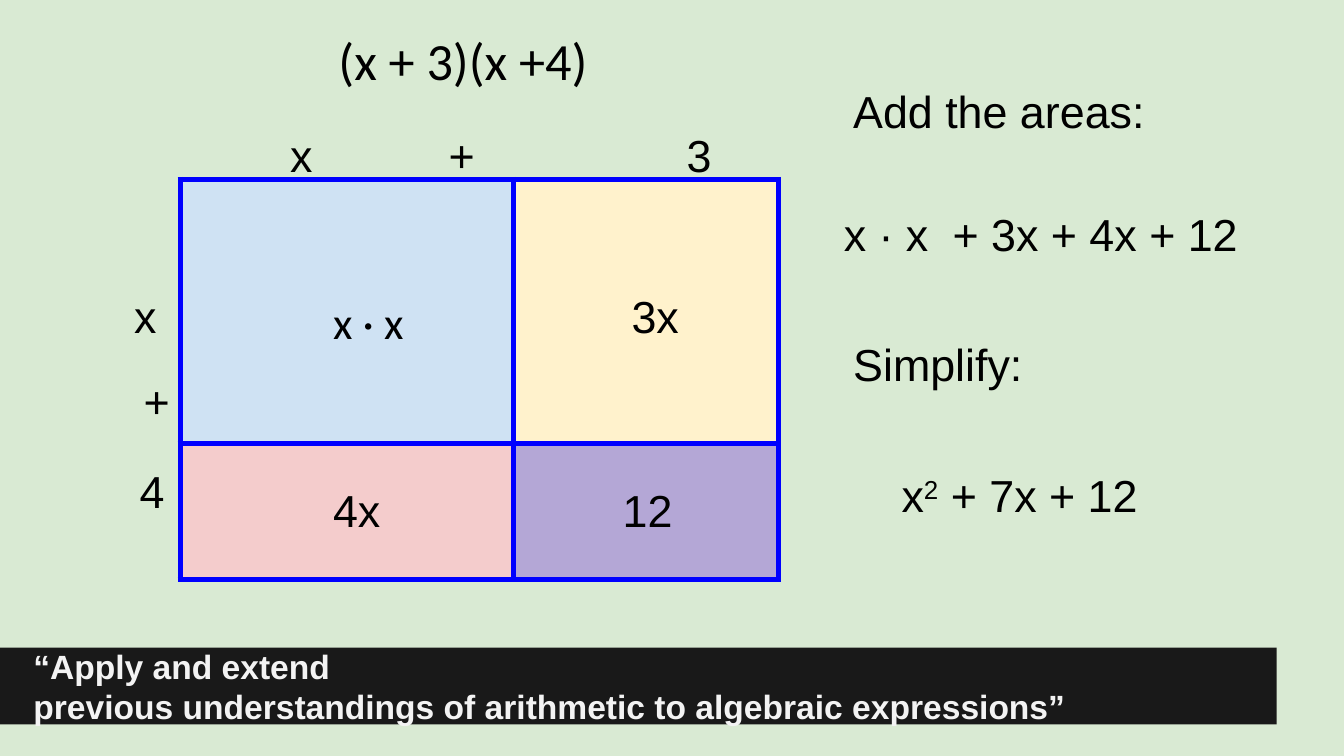
from lxml import etree
from pptx import Presentation, util as u
from pptx.dml.color import RGBColor
from pptx.enum import shapes, text
from pptx.oxml import ns

WIDTH = u.Inches(10)
HEIGHT = WIDTH * 9 // 16
COLUMNS, ROWS = 100, 56.25  # square grid cells
MIDDLE = text.MSO_ANCHOR.MIDDLE
CENTER = text.PP_ALIGN.CENTER


def color(value):
    return RGBColor.from_string(value)


def box(column, row, width, height):
    """Turn grid columns and rows into slide lengths."""
    return (round(WIDTH * column / COLUMNS), round(HEIGHT * row / ROWS),
            round(WIDTH * width / COLUMNS), round(HEIGHT * height / ROWS))


class AreaSlide:
    font, size, ink = "Arial", 24, "000000"
    border, border_points = "0000FF", 3

    def __init__(self, presentation, background):
        self.slide = presentation.slides.add_slide(presentation.slide_layouts[6])
        self.slide.background.fill.solid()
        self.slide.background.fill.fore_color.rgb = color(background)

    def bar(self, place, fill):
        shape = self.slide.shapes.add_shape(shapes.MSO_SHAPE.RECTANGLE, *box(*place))
        shape.shadow.inherit = False
        shape.fill.solid()
        shape.fill.fore_color.rgb = color(fill)
        shape.line.fill.background()

    def label(self, place, lines, font=None, size=None, ink=None, bold=False,
              anchor=text.MSO_ANCHOR.TOP, align=text.PP_ALIGN.LEFT, tabs=()):
        """Add text, one paragraph a line; tabs are in grid columns."""
        frame = self.slide.shapes.add_textbox(*box(*place)).text_frame
        frame.word_wrap = True
        frame.vertical_anchor = anchor
        frame.margin_left = frame.margin_right = u.Inches(0.1)
        frame.margin_top = frame.margin_bottom = u.Inches(0.1)
        frame.text = lines
        for paragraph in frame.paragraphs:
            paragraph.alignment = align
            if tabs:
                self.add_tabs(paragraph, tabs)
            for run in paragraph.runs:
                self.style(run, font, size, ink, bold)
        return frame.paragraphs[0]

    def style(self, run, font=None, size=None, ink=None, bold=False):
        run.font.name = font or self.font
        run.font.size = u.Pt(size or self.size)
        run.font.color.rgb = color(ink or self.ink)
        run.font.bold = bold

    def add_tabs(self, paragraph, tabs):
        properties = paragraph._p.get_or_add_pPr()
        stops = etree.SubElement(properties, ns.qn("a:tabLst"))
        for tab in tabs:
            etree.SubElement(stops, ns.qn("a:tab"), algn="l",
                             pos=str(round(WIDTH * tab / COLUMNS)))

    def power(self, place, parts):
        """Add an expression whose second part is raised."""
        paragraph = self.label(place, parts[0], anchor=MIDDLE)
        paragraph.line_spacing = 1.15
        for part in parts[1:]:
            run = paragraph.add_run()
            run.text = part
            self.style(run)
        paragraph.runs[1].font._element.set("baseline", "30000")

    def area_table(self, left, top, widths, heights, fills):
        place = box(left, top, sum(widths), sum(heights))
        table = self.slide.shapes.add_table(len(heights), len(widths), *place).table
        table.first_row = table.horz_banding = False
        for column, width in zip(table.columns, widths):
            column.width = round(WIDTH * width / COLUMNS)
        for row, height in zip(table.rows, heights):
            row.height = round(HEIGHT * height / ROWS)
        for cell, fill in zip(table.iter_cells(), fills):
            self.add_borders(cell)
            cell.fill.solid()
            cell.fill.fore_color.rgb = color(fill)

    def add_borders(self, cell):
        properties = cell._tc.get_or_add_tcPr()
        for side in "LRTB":
            line = etree.SubElement(properties, ns.qn("a:ln" + side),
                                    w=str(u.Pt(self.border_points)))
            fill = etree.SubElement(line, ns.qn("a:solidFill"))
            etree.SubElement(fill, ns.qn("a:srgbClr"), val=self.border)


def main():
    presentation = Presentation()
    presentation.slide_width, presentation.slide_height = WIDTH, HEIGHT
    page = AreaSlide(presentation, "D9EAD3")

    # Footer bar and area model
    page.bar((0, 48.2, 95, 5.7), "191919")
    page.area_table(13.4, 13.35, (24.8, 19.7), (19.65, 10.1),
                    ("CFE2F3", "FFF2CC", "F4CCCC", "B4A7D6"))

    # Factors along the top and the left side
    page.label((20.6, 8.5, 40.5, 4.2), "x\t+\t3", tabs=(11.8, 29.5))
    page.label((9, 20.15, 7.8, 6.7), "x", anchor=MIDDLE)
    page.label((9.7, 26.8, 4, 4.2), "+")
    page.label((9.4, 33.55, 4.1, 5.9), "4", anchor=MIDDLE)

    # Products inside the areas
    page.label((23.8, 20.9, 11.1, 8.2), "x · x", font="Calibri")
    page.label((45.35, 20.5, 6.8, 5.9), "3x", align=CENTER)
    page.label((23.8, 34.9, 11.1, 6.7), "4x")
    page.label((45.35, 34.9, 6.8, 6.7), "12")

    # Title expression
    page.label((24.2, 1.1, 32.8, 6.7), "(x + 3)(x +4)", font="Calibri",
               size=28, anchor=MIDDLE)

    # Steps on the right
    page.label((62.5, 5.2, 37.5, 13), "Add the areas:")
    page.label((61.8, 14.4, 35.6, 13.4), "x · x\t+ 3x + 4x + 12", tabs=(8.1,))
    page.label((62.5, 24.05, 30.2, 13), "Simplify:")
    page.power((66.1, 32.8, 40.5, 7.4), ("x", "2", " + 7x + 12"))

    # Footer quotation
    page.label((1.5, 48.2, 97.2, 5.7),
               "“Apply and extend\nprevious understandings of arithmetic "
               "to algebraic expressions”",
               size=18, ink="F3F3F3", bold=True, anchor=MIDDLE)

    presentation.save("out.pptx")


if __name__ == "__main__":
    main()
